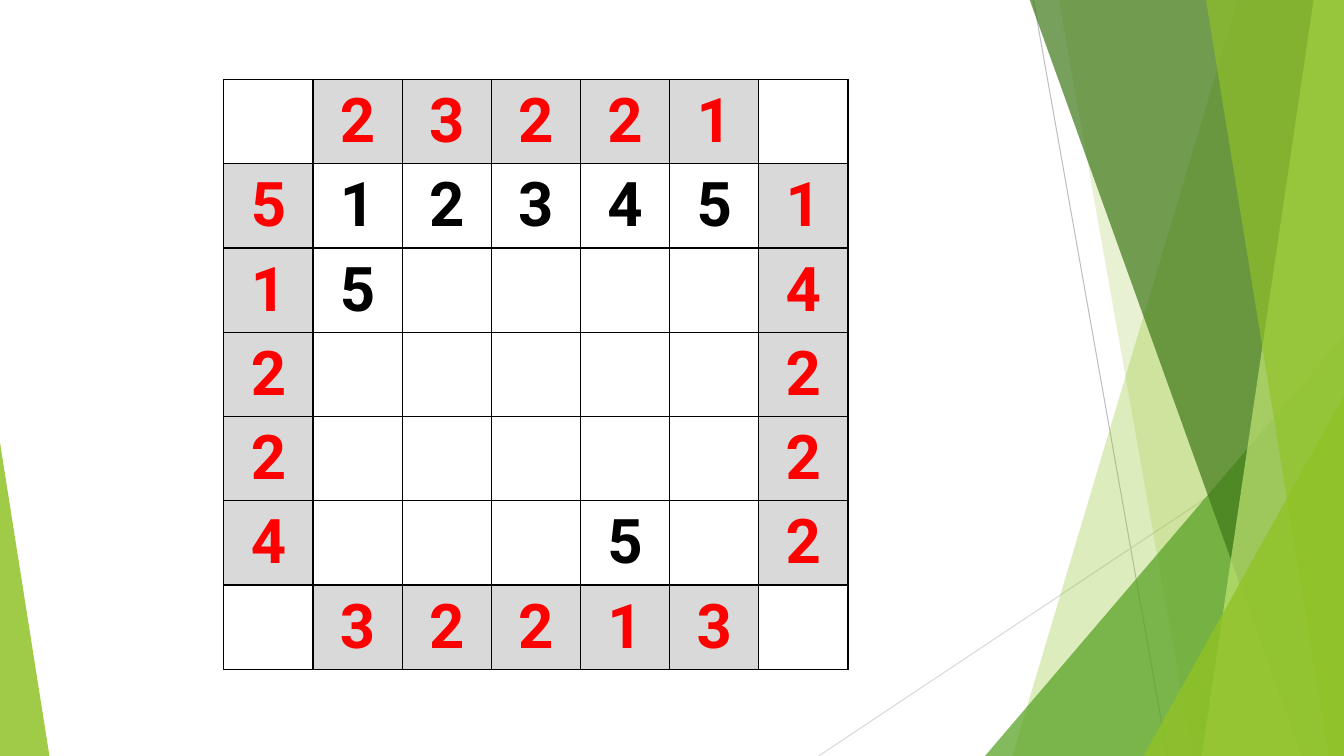
from dataclasses import dataclass

from lxml.etree import SubElement
from pptx import Presentation
from pptx.dml.color import RGBColor
from pptx.enum.shapes import MSO_CONNECTOR as Connector, MSO_SHAPE as Preset
from pptx.enum.text import MSO_ANCHOR as Anchor, PP_ALIGN as Align
from pptx.oxml import parse_xml
from pptx.oxml.ns import nsdecls, qn
from pptx.shapes.autoshape import Shape
from pptx.slide import Slide
from pptx.table import _Cell as Cell
from pptx.util import Inches, Pt


@dataclass(frozen=True)
class Theme:
    font: str = "Roboto"
    digit_size: float = 44
    border_width: float = 1
    ray_width: float = 0.75
    clue: str = "FF0000"
    clue_fill: str = "D9D9D9"
    answer: str = "000000"
    border: str = "000000"
    paper: str = "FFFFFF"
    lime: str = "90C226"
    green: str = "54A021"
    forest: str = "3F7819"
    pale: str = "C0E474"
    ray_dark: str = "BFBFBF"
    ray_light: str = "D9D9D9"


@dataclass(frozen=True)
class Ray:
    start: tuple[float, float]
    end: tuple[float, float]
    color: str


@dataclass(frozen=True)
class Band:
    top_x: float
    bottom_x: float
    color: str
    opacity: int


@dataclass(frozen=True)
class Wedge:
    left: float
    top: float
    width: float
    apex: float
    color: str
    opacity: int


THEME = Theme()
WIDTH, HEIGHT = 13.33, 7.5
BAND_TOP = -0.01

RAYS = [
    Ray((10.25, 0), (11.58, HEIGHT), THEME.ray_dark),
    Ray((WIDTH, 4.03), (8.12, HEIGHT), THEME.ray_light),
]
FACETS = [
    Band(12.28, 10.04, THEME.lime, 30),
    Band(10.5, 11.83, THEME.lime, 20),
    Wedge(9.77, 3.33, 3.56, 1, THEME.green, 72),
    Band(10.21, 12.91, THEME.forest, 70),
    Band(13.03, 11.92, THEME.pale, 70),
    Band(11.96, 13.18, THEME.lime, 65),
    Wedge(11.34, 3.93, 1.99, 1, THEME.lime, 80),
    Wedge(0, 4.39, 0.49, 0, THEME.lime, 85),
]
PUZZLE = [
    " 23221 ",
    "5123451",
    "15    4",
    "2     2",
    "2     2",
    "4   5 2",
    " 32213 ",
]
PUZZLE_LEFT, PUZZLE_TOP = 2.22, 0.79
PUZZLE_WIDTH, PUZZLE_HEIGHT = 6.19, 5.85


def rgb(color: str) -> RGBColor:
    return RGBColor.from_string(color)


def draw_ray(slide: Slide, ray: Ray) -> None:
    line = slide.shapes.add_connector(
        Connector.STRAIGHT, *(Inches(value) for value in ray.start + ray.end)
    )
    line.line.color.rgb = rgb(ray.color)
    line.line.width = Pt(THEME.ray_width)
    SubElement(line._element.spPr, qn("a:effectLst"))


def band_outline(slide: Slide, band: Band) -> Shape:
    corners = [(WIDTH, BAND_TOP), (WIDTH, HEIGHT), (band.bottom_x, HEIGHT)]
    outline = slide.shapes.build_freeform(Inches(band.top_x), Inches(BAND_TOP))
    outline.add_line_segments([(Inches(x), Inches(y)) for x, y in corners])
    return outline.convert_to_shape()


def wedge_outline(slide: Slide, wedge: Wedge) -> Shape:
    triangle = slide.shapes.add_shape(
        Preset.ISOSCELES_TRIANGLE,
        Inches(wedge.left),
        Inches(wedge.top),
        Inches(wedge.width),
        Inches(HEIGHT - wedge.top),
    )
    triangle.adjustments[0] = wedge.apex
    return triangle


def draw_facet(slide: Slide, facet: Band | Wedge) -> None:
    outline = band_outline if isinstance(facet, Band) else wedge_outline
    shape = outline(slide, facet)
    shape.shadow.inherit = False
    shape.line.fill.background()
    shape.fill.solid()
    shape.fill.fore_color.rgb = rgb(facet.color)
    tint = shape._element.spPr.find(qn("a:solidFill"))[0]
    SubElement(tint, qn("a:alpha")).set("val", str(facet.opacity * 1000))


def draw_borders(cell: Cell) -> None:
    properties = cell._tc.get_or_add_tcPr()
    for position, side in enumerate("LRTB"):
        border = parse_xml(
            f'<a:ln{side} {nsdecls("a")} w="{Pt(THEME.border_width)}"><a:solidFill>'
            f'<a:srgbClr val="{THEME.border}"/></a:solidFill></a:ln{side}>'
        )
        properties.insert(position, border)


def fill_cell(cell: Cell, digit: str, is_clue: bool) -> None:
    cell.fill.solid()
    cell.fill.fore_color.rgb = rgb(THEME.clue_fill if is_clue else THEME.paper)
    cell.vertical_anchor = Anchor.MIDDLE
    cell.text = digit
    paragraph = cell.text_frame.paragraphs[0]
    paragraph.alignment = Align.CENTER
    paragraph.font.name = THEME.font
    paragraph.font.size = Pt(THEME.digit_size)
    paragraph.font.bold = True
    paragraph.font.color.rgb = rgb(THEME.clue if is_clue else THEME.answer)
    draw_borders(cell)


def draw_puzzle(slide: Slide) -> None:
    size = len(PUZZLE)
    table = slide.shapes.add_table(
        size,
        size,
        Inches(PUZZLE_LEFT),
        Inches(PUZZLE_TOP),
        Inches(PUZZLE_WIDTH),
        Inches(PUZZLE_HEIGHT),
    ).table
    table.first_row = False
    table.horz_banding = False
    edges = (0, size - 1)
    for row, digits in enumerate(PUZZLE):
        for column, digit in enumerate(digits):
            is_clue = (row in edges) != (column in edges)
            fill_cell(table.cell(row, column), digit.strip(), is_clue)


def main() -> None:
    presentation = Presentation()
    presentation.slide_width = Inches(WIDTH)
    presentation.slide_height = Inches(HEIGHT)
    slide = presentation.slides.add_slide(presentation.slide_layouts[6])
    for ray in RAYS:
        draw_ray(slide, ray)
    for facet in FACETS:
        draw_facet(slide, facet)
    draw_puzzle(slide)
    presentation.save("out.pptx")


if __name__ == "__main__":
    main()
